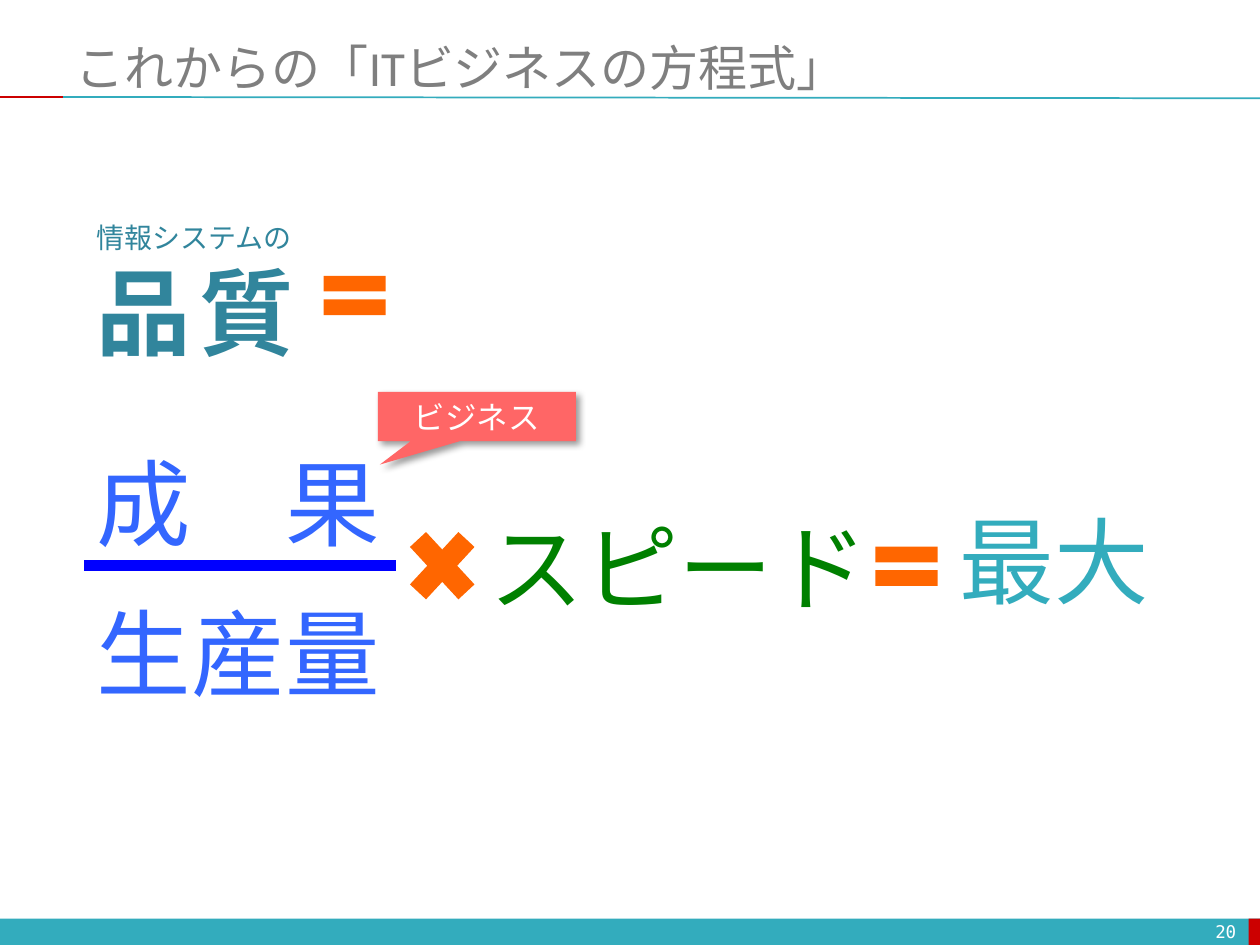
import pptx
import pptx.util
import pptx.dml.color
import pptx.enum.shapes
import pptx.enum.text
import pptx.oxml
import pptx.oxml.ns

Inches = pptx.util.Inches
Pt = pptx.util.Pt
RGBColor = pptx.dml.color.RGBColor
SHAPE = pptx.enum.shapes.MSO_SHAPE
ALIGN = pptx.enum.text.PP_ALIGN
ANCHOR = pptx.enum.text.MSO_ANCHOR
AUTO = pptx.enum.text.MSO_AUTO_SIZE

TEAL = RGBColor(0x33, 0xAC, 0xBD)
DARK_TEAL = RGBColor(0x31, 0x85, 0x9C)
RED = RGBColor(0xCC, 0x00, 0x00)
GRAY = RGBColor(0x7F, 0x7F, 0x7F)
WHITE = RGBColor(0xFF, 0xFF, 0xFF)
ORANGE = RGBColor(0xFF, 0x66, 0x00)
BLUE = RGBColor(0x33, 0x66, 0xFF)
PURE_BLUE = RGBColor(0x00, 0x00, 0xFF)
GREEN = RGBColor(0x00, 0x80, 0x00)
CORAL = RGBColor(0xFF, 0x66, 0x66)
JAPANESE = "Noto Sans CJK JP"
NS = pptx.oxml.ns.nsdecls("a")


def add_run(paragraph, text, color, **formats):
    run = paragraph.add_run()
    run.text = text
    run.font.color.rgb = color
    for key, value in ({"name": JAPANESE} | formats).items():
        setattr(run.font, key, value)
    run.font._element.find(pptx.oxml.ns.qn("a:latin")).addnext(
        pptx.oxml.parse_xml(f'<a:ea {NS} typeface="{JAPANESE}"/>'))


def add_solid(kind, box, color):
    solid = slide.shapes.add_shape(kind, *map(Inches, box))
    solid.shadow.inherit = False
    solid.fill.solid()
    solid.fill.fore_color.rgb = color
    solid.line.fill.background()
    return solid


prs = pptx.Presentation()
prs.slide_width, prs.slide_height = Inches(10), Inches(7.5)
slide = prs.slides.add_slide(prs.slide_layouts[6])

for left, width, color in [(0, 10, TEAL), (9.91, 0.1, RED)]:
    add_solid(SHAPE.RECTANGLE, (left, 7.29, width, 0.22), color)

for x1, y1, x2, y2, color, weight in [
    (0.5, 0.77, 10, 0.78, TEAL, 1),
    (0, 0.77, 0.5, 0.77, RED, 1),
    (0.67, 4.49, 3.14, 4.49, PURE_BLUE, 6),
]:
    rule = slide.shapes.add_connector(
        pptx.enum.shapes.MSO_CONNECTOR.STRAIGHT, *map(Inches, (x1, y1, x2, y2)))
    rule.line.color.rgb = color
    rule.line.width = Pt(weight)
    rule._element.spPr.append(pptx.oxml.parse_xml(f"<a:effectLst {NS}/>"))

for text, box, color, size, font, align in [
    ("これからの「ITビジネスの方程式」", (0.5, 0.3, 9.5, 0.46), GRAY, 28, "Calibri", ALIGN.LEFT),
    ("20", (7.58, 7.27, 2.33, 0.24), WHITE, 10, "DejaVu Sans Mono", ALIGN.RIGHT),
]:
    frame = slide.shapes.add_textbox(*map(Inches, box)).text_frame
    frame.word_wrap = True
    frame.vertical_anchor = ANCHOR.MIDDLE
    frame.paragraphs[0].alignment = align
    add_run(frame.paragraphs[0], text, color, size=Pt(size), name=font)

quality = slide.shapes.add_textbox(*map(Inches, (0.67, 1.7, 1.81, 1.28))).text_frame
quality.word_wrap = False
quality.auto_size = AUTO.SHAPE_TO_FIT_TEXT
quality.paragraphs[0].alignment = ALIGN.JUSTIFY
add_run(quality.paragraphs[0], "情報システムの", DARK_TEAL, size=Pt(16))
quality_word = quality.add_paragraph()
quality_word.alignment = ALIGN.JUSTIFY
for text, size in [("品", 54), (" ", 20), ("質", 54)]:
    add_run(quality_word, text, DARK_TEAL, size=Pt(size), bold=True)

for text, left, top, width, color in [
    ("成　果", 0.67, 3.48, 2.47, BLUE),
    ("生産量", 0.67, 4.67, 2.47, BLUE),
    ("スピード", 3.79, 3.99, 3.23, GREEN),
    ("最大", 7.52, 3.94, 1.72, TEAL),
]:
    term = slide.shapes.add_textbox(*map(Inches, (left, top, width, 1.01))).text_frame
    term.word_wrap = False
    term.auto_size = AUTO.SHAPE_TO_FIT_TEXT
    add_run(term.paragraphs[0], text, color, size=Pt(54))

for operator, box in [
    (SHAPE.MATH_EQUAL, (2.48, 2.08, 0.67, 0.53)),
    (SHAPE.MATH_MULTIPLY, (3.14, 4.09, 0.74, 0.8)),
    (SHAPE.MATH_EQUAL, (6.86, 4.23, 0.67, 0.53)),
]:
    add_solid(operator, box, ORANGE)

business = add_solid(SHAPE.RECTANGULAR_CALLOUT, (3, 3.11, 1.57, 0.39), CORAL)
business.adjustments[0], business.adjustments[1] = -0.49, 0.98
business._element.spPr.find(pptx.oxml.ns.qn("a:effectLst")).append(pptx.oxml.parse_xml(
    f'<a:outerShdw {NS} blurRad="{Pt(4)}" dist="{Pt(3)}" dir="2700000" algn="tl" rotWithShape="0">'
    '<a:srgbClr val="000000"><a:alpha val="40000"/></a:srgbClr></a:outerShdw>'))
business.text_frame.vertical_anchor = ANCHOR.MIDDLE
business.text_frame.paragraphs[0].alignment = ALIGN.CENTER
add_run(business.text_frame.paragraphs[0], "ビジネス", WHITE, size=Pt(18))

prs.save("out.pptx")
